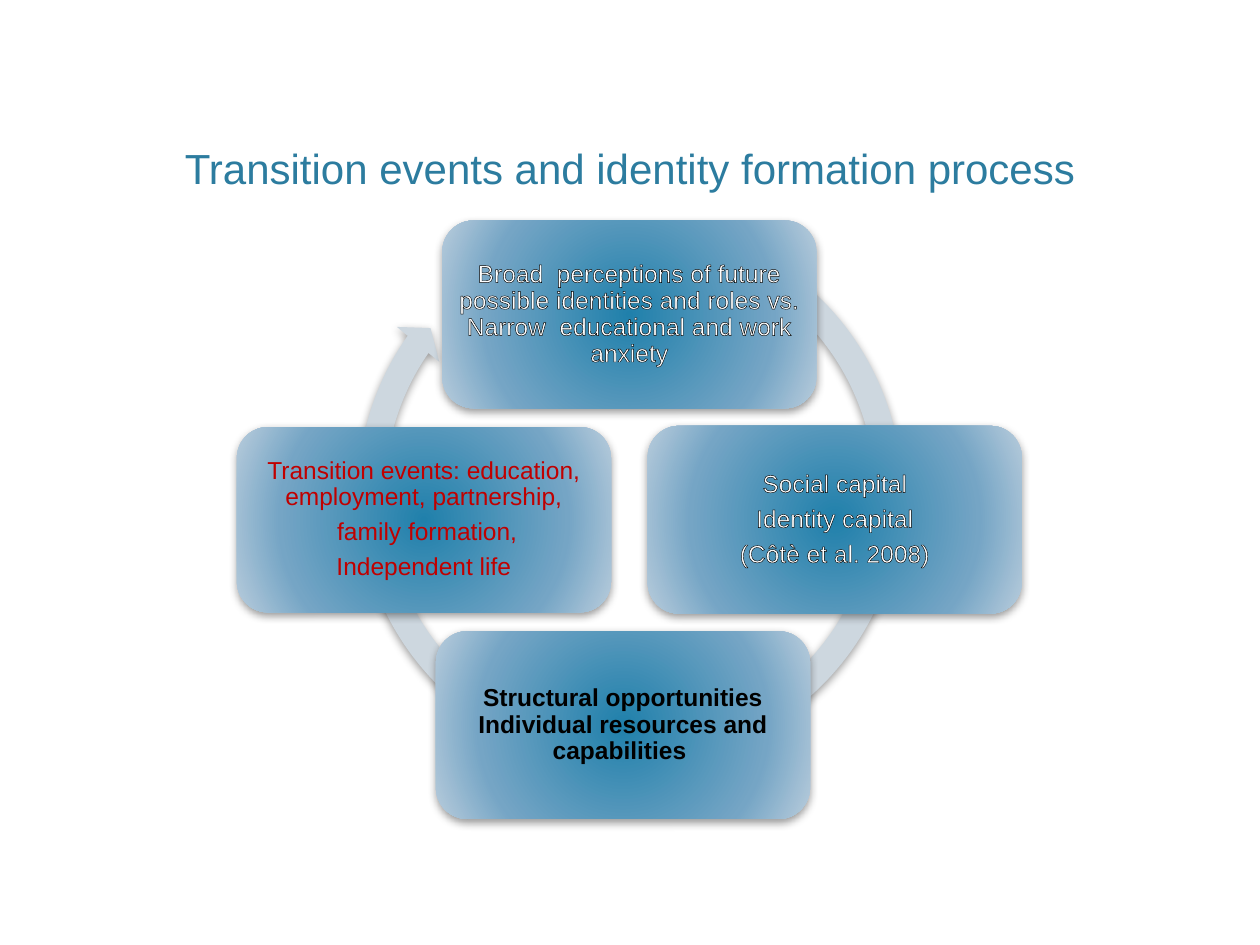
from lxml import etree
from pptx import Presentation
from pptx.dml.color import RGBColor
from pptx.enum.shapes import MSO_SHAPE
from pptx.enum.text import MSO_ANCHOR, PP_ALIGN
from pptx.oxml import parse_xml
from pptx.oxml.ns import nsdecls, qn
from pptx.util import Inches, Pt

ROUNDED = MSO_SHAPE.ROUNDED_RECTANGLE
CIRCULAR_ARROW = MSO_SHAPE.CIRCULAR_ARROW
CENTER = PP_ALIGN.CENTER
MIDDLE = MSO_ANCHOR.MIDDLE
BOTTOM = MSO_ANCHOR.BOTTOM

FONT = "Arial"
COLORS = {
    "title": "2C7C9F",
    "arrow": "CDD7DF",
    "inner": "2080AB",
    "middle": "75A5C5",
    "outer": "B8CCDC",
    "white": "FFFFFF",
    "black": "000000",
    "red": "C00000",
}
GRADIENT_STOPS = [(0, "inner"), (69, "middle"), (100, "outer")]
CARD_WIDTH = 2.97

# left, top, height, text colour, bold, outlined, paragraphs
CARDS = [
    (3.51, 1.75, 1.49, "white", False, True,
     ["Broad  perceptions of future possible identities and roles vs. "
      "Narrow  educational and work anxiety"]),
    (5.14, 3.38, 1.49, "white", False, True,
     ["Social capital", "Identity capital", "(Côtè et al. 2008)"]),
    (3.46, 5.01, 1.49, "black", True, False,
     ["Structural opportunities Individual resources and capabilities "]),
    (1.88, 3.39, 1.47, "red", False, True,
     ["Transition events: education, employment, partnership,",
      " family formation,", "Independent life"]),
]


def add_shadow(shape):
    """Give the shape a soft shadow that falls straight down."""
    shape.shadow.inherit = False
    effects = shape._element.spPr.find(qn("a:effectLst"))
    effects.append(parse_xml(
        f'<a:outerShdw {nsdecls("a")} blurRad="{Pt(5)}" dist="{Pt(2)}" '
        f'dir="5400000" rotWithShape="0"><a:srgbClr val="{COLORS["black"]}">'
        '<a:alpha val="40000"/></a:srgbClr></a:outerShdw>'))


def set_radial_fill(shape):
    """Fill the shape with a gradient that spreads from its centre."""
    shape.fill.gradient()
    stops = "".join(
        f'<a:gs pos="{position * 1000}"><a:srgbClr val="{COLORS[name]}"/></a:gs>'
        for position, name in GRADIENT_STOPS)
    gradient = parse_xml(
        f'<a:gradFill {nsdecls("a")} rotWithShape="1"><a:gsLst>{stops}</a:gsLst>'
        '<a:path path="circle"><a:fillToRect l="100000" t="100000" '
        'r="100000" b="100000"/></a:path></a:gradFill>')
    properties = shape._element.spPr
    properties.replace(properties.find(qn("a:gradFill")), gradient)


def add_outline(run):
    """Draw a thin black line around the letters."""
    line = etree.Element(qn("a:ln"), w=str(Pt(0.75)))
    fill = etree.SubElement(line, qn("a:solidFill"))
    etree.SubElement(fill, qn("a:srgbClr"), val=COLORS["black"])
    run.font._element.insert(0, line)


def add_run(paragraph, text, size, color, bold=False):
    run = paragraph.add_run()
    run.text = text
    run.font.name = FONT
    run.font.size = Pt(size)
    run.font.bold = bold
    run.font.color.rgb = RGBColor.from_string(COLORS[color])
    return run


def add_title(slide, text):
    box = slide.shapes.add_textbox(
        Inches(0.6), Inches(0.12), Inches(8.8), Inches(1.46))
    frame = box.text_frame
    frame.word_wrap = True
    frame.vertical_anchor = BOTTOM
    paragraph = frame.paragraphs[0]
    paragraph.alignment = CENTER
    add_run(paragraph, text, 24, "title")


def add_cycle_arrow(slide):
    arrow = slide.shapes.add_shape(
        CIRCULAR_ARROW, Inches(2.73), Inches(1.64), Inches(4.54), Inches(4.54))
    # Band width, head angle, end angle, start angle, head width
    for index, value in enumerate([0.047, 2.729, 128.991, 179.849, 0.048]):
        arrow.adjustments[index] = value
    arrow.fill.solid()
    arrow.fill.fore_color.rgb = RGBColor.from_string(COLORS["arrow"])
    arrow.line.fill.background()
    add_shadow(arrow)


def add_card(slide, left, top, height, color, bold, outlined, paragraphs):
    card = slide.shapes.add_shape(
        ROUNDED, Inches(left), Inches(top), Inches(CARD_WIDTH), Inches(height))
    set_radial_fill(card)
    card.line.fill.background()
    add_shadow(card)

    frame = card.text_frame
    frame.word_wrap = True
    frame.vertical_anchor = MIDDLE
    frame.margin_left = frame.margin_right = Inches(0.06)
    frame.margin_top = frame.margin_bottom = Inches(0.06)
    for index, text in enumerate(paragraphs):
        paragraph = frame.add_paragraph() if index else frame.paragraphs[0]
        paragraph.alignment = CENTER
        paragraph.line_spacing = 0.9
        paragraph.space_after = Pt(4.9)
        run = add_run(paragraph, text, 14, color, bold)
        if outlined:
            add_outline(run)


def main():
    presentation = Presentation()
    presentation.slide_width = Inches(10)
    presentation.slide_height = Inches(7.5)
    slide = presentation.slides.add_slide(presentation.slide_layouts[6])

    # Heading
    add_title(slide, "Transition events and identity formation process")

    # Cycle: the arrow lies behind the four cards
    add_cycle_arrow(slide)
    for card in CARDS:
        add_card(slide, *card)

    presentation.save("out.pptx")


if __name__ == "__main__":
    main()
